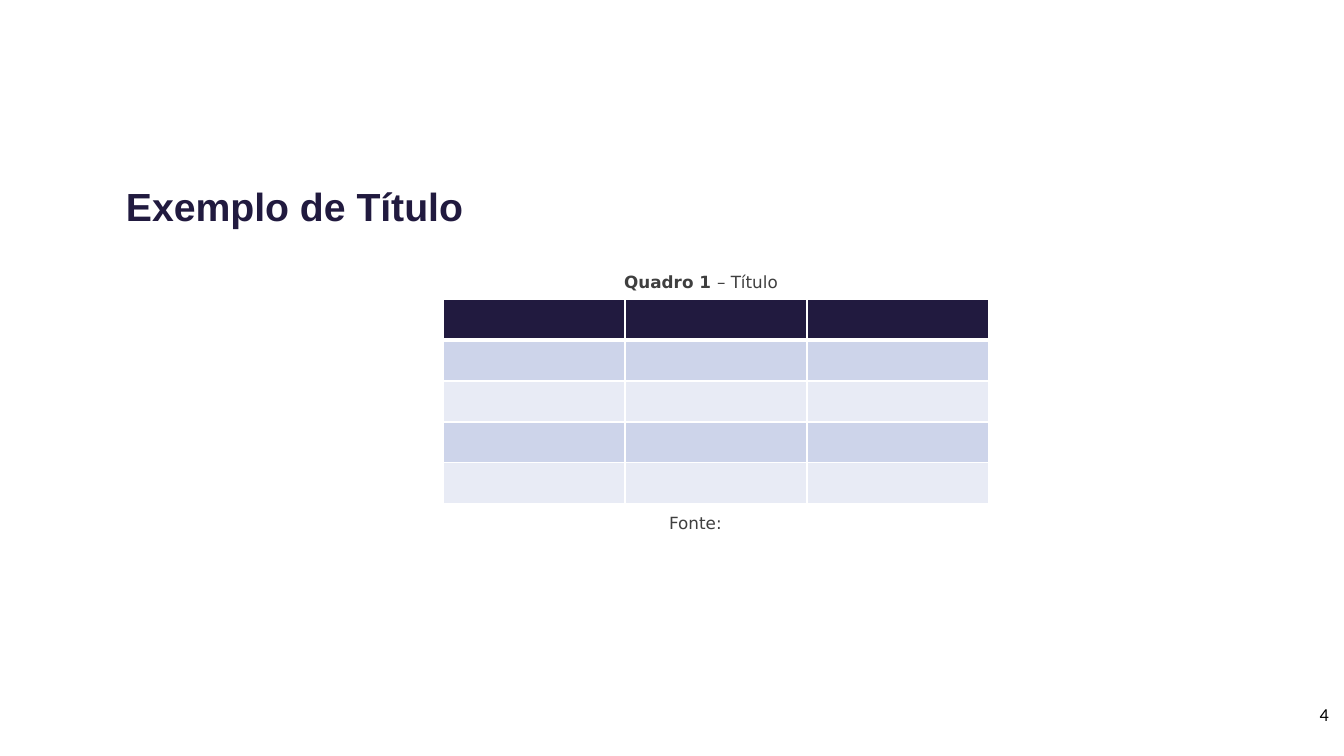
from lxml import etree
from pptx import Presentation
from pptx import util as u
from pptx.dml.color import RGBColor
from pptx.enum import text
from pptx.oxml import ns

NAVY = RGBColor(0x21, 0x1A, 0x3F)
GREY = RGBColor(0x3F, 0x3F, 0x3F)
BLACK = RGBColor(0, 0, 0)
BAND_DARK = RGBColor(0xCD, 0xD4, 0xEA)
BAND_LIGHT = RGBColor(0xE8, 0xEB, 0xF5)
WHITE = RGBColor(0xFF, 0xFF, 0xFF)


class SlideBuilder:
    """Draws text and tables in one style on the current page."""

    caption_font = "DejaVu Sans"
    caption_size = 12
    line_spacing = 1.07

    def __init__(self, page):
        self.page = page

    def label(self, left, top, width, height, pieces, font, size, color,
              align=text.PP_ALIGN.LEFT, spacing=None, side_inset=7.2):
        box = self.page.shapes.add_textbox(
            u.Pt(left), u.Pt(top), u.Pt(width), u.Pt(height))
        frame = box.text_frame
        frame.word_wrap = True
        frame.margin_left = frame.margin_right = u.Pt(side_inset)
        frame.margin_top = frame.margin_bottom = u.Pt(3.6)
        para = frame.paragraphs[0]
        para.alignment = align
        para.line_spacing = spacing
        for words, bold in pieces:
            span = para.add_run()
            span.text = words
            span.font.name = font
            span.font.size = u.Pt(size)
            span.font.bold = bold
            span.font.color.rgb = color
        return box

    def caption(self, left, top, width, pieces):
        box = self.label(left, top, width, 23, pieces, self.caption_font,
                         self.caption_size, GREY, text.PP_ALIGN.CENTER,
                         self.line_spacing)
        box.text_frame.auto_size = text.MSO_AUTO_SIZE.SHAPE_TO_FIT_TEXT

    def border(self, cell, side, weight):
        props = cell._tc.get_or_add_tcPr()
        line = etree.SubElement(props, ns.qn(f"a:ln{side}"), w=str(u.Pt(weight)))
        fill = etree.SubElement(line, ns.qn("a:solidFill"))
        etree.SubElement(fill, ns.qn("a:srgbClr"), val=str(WHITE))

    def table(self, left, top, columns, rows, column_width, row_height):
        grid = self.page.shapes.add_table(
            rows, columns, u.Pt(left), u.Pt(top),
            u.Pt(columns * column_width), u.Pt(rows * row_height)).table
        for column in grid.columns:
            column.width = u.Pt(column_width)
        for index, row in enumerate(grid.rows):
            row.height = u.Pt(row_height)
            band = BAND_DARK if index % 2 else BAND_LIGHT
            weights = {"L": 1, "R": 1, "T": 3 if index == 1 else 1,
                       "B": 3 if index == 0 else 1}
            for cell in row.cells:
                for side, weight in weights.items():
                    self.border(cell, side, weight)
                cell.fill.solid()
                cell.fill.fore_color.rgb = band if index else NAVY


def main():
    deck = Presentation()
    deck.slide_width, deck.slide_height = u.Pt(960), u.Pt(540)
    builder = SlideBuilder(deck.slides.add_slide(deck.slide_layouts[6]))
    builder.label(86.4, 124.5, 330, 40.3, [("Exemplo de Título", True)],
                  "Arial", 28, NAVY, spacing=builder.line_spacing, side_inset=3.6)
    builder.caption(364.3, 189.4, 272.9, [("Quadro 1 ", True), ("– Título", False)])
    builder.caption(416.2, 361.4, 164.9, [("Fonte: ", False)])
    builder.table(316.4, 213.8, 3, 5, 130, 29.2)
    builder.label(898.6, 499, 57.6, 41, [("4", False)], "Calibri", 13, BLACK,
                  text.PP_ALIGN.RIGHT)
    deck.save("out.pptx")


if __name__ == "__main__":
    main()
